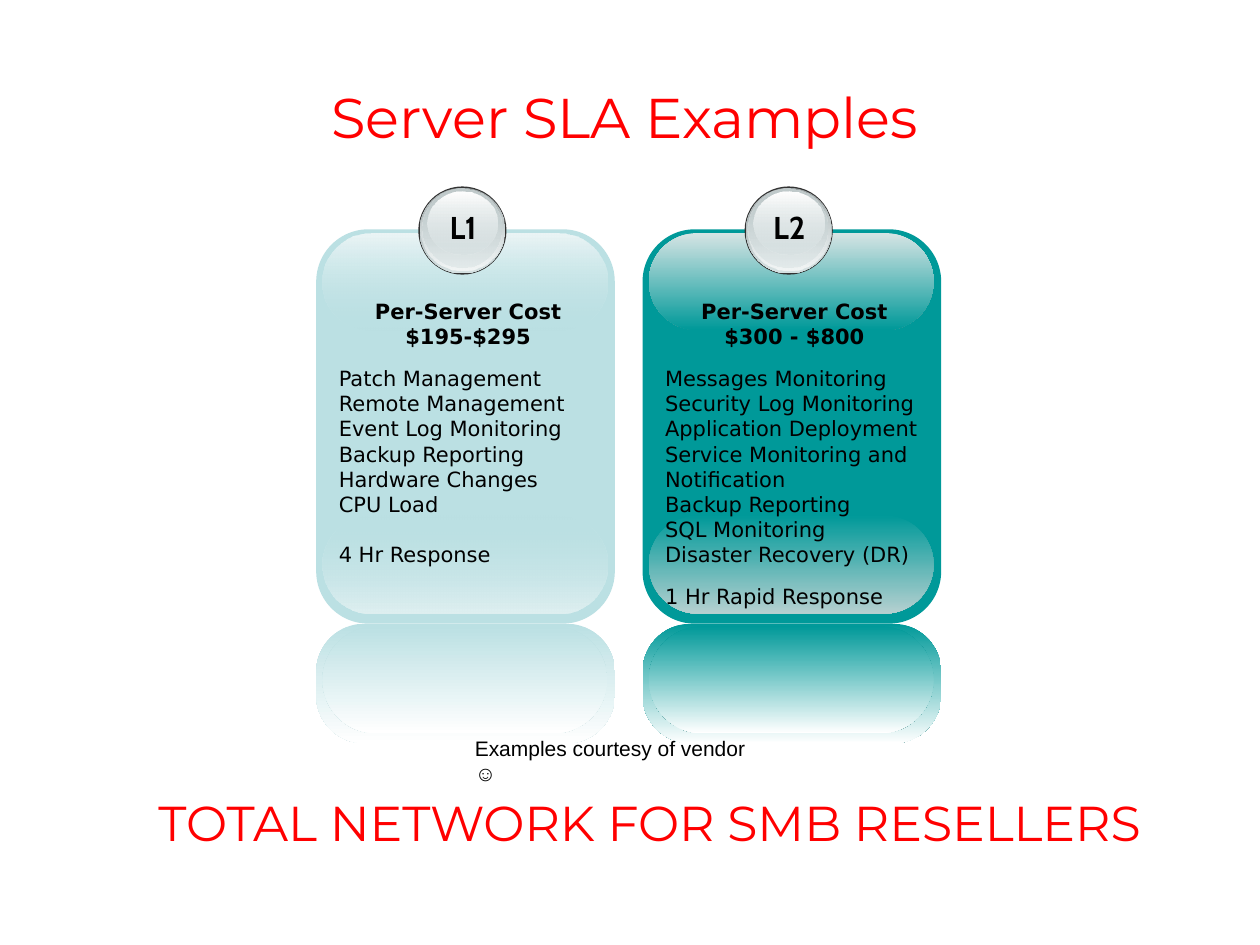
from dataclasses import dataclass
from typing import NamedTuple, Optional

from lxml import etree
from pptx import Presentation
from pptx.dml.color import RGBColor
from pptx.enum.shapes import MSO_SHAPE
from pptx.enum.text import MSO_ANCHOR, PP_ALIGN
from pptx.oxml.ns import qn
from pptx.util import Inches, Pt

ROUND, OVAL = MSO_SHAPE.ROUNDED_RECTANGLE, MSO_SHAPE.OVAL
LEFT, CENTER, MIDDLE = PP_ALIGN.LEFT, PP_ALIGN.CENTER, MSO_ANCHOR.MIDDLE

RED = RGBColor(0xFF, 0x00, 0x00)
BLACK = RGBColor(0x00, 0x00, 0x00)
WHITE = RGBColor(0xFF, 0xFF, 0xFF)
PALE = RGBColor(0xBB, 0xE0, 0xE3)
PALE_TOP = RGBColor(0xEB, 0xF5, 0xF6)
PALE_BOTTOM = RGBColor(0xDF, 0xF0, 0xF1)
TEAL = RGBColor(0x00, 0x99, 0x99)
TEAL_TOP = RGBColor(0xD6, 0xE4, 0xE4)
TEAL_BOTTOM = RGBColor(0xB5, 0xD0, 0xD0)
RIM = RGBColor(0x33, 0x33, 0x33)
STEEL = RGBColor(0x99, 0xA1, 0xA2)
GREY = RGBColor(0xC1, 0xCB, 0xCC)
SILVER = RGBColor(0xD6, 0xE1, 0xE2)
FROST = RGBColor(0xF2, 0xF5, 0xF5)

HEADING = dict(name="Montserrat", color=RED, bold=False)
BADGE = dict(name="Cabin", size=Pt(18), color=BLACK, bold=True)
BODY = dict(name="DejaVu Sans", size=Pt(12), color=BLACK, bold=False)
NOTE = dict(name="Arial", size=Pt(12), color=BLACK, bold=False)


class Stop(NamedTuple):
    color: RGBColor
    opacity: int = 100


class Layer(NamedTuple):
    """One filled shape; a single stop is a solid fill, two run downwards."""
    kind: int
    box: tuple
    stops: tuple
    adj: Optional[float] = None


class Line(NamedTuple):
    text: str
    align: int = LEFT
    bold: bool = False
    before: float = 0


@dataclass
class Panel:
    left: float
    label: str
    base: RGBColor
    top: RGBColor
    bottom: RGBColor
    cap_opacity: int
    price: str
    services: list
    response: str
    response_gap: float


PANELS = [
    Panel(2.51, "L1", PALE, PALE_TOP, PALE_BOTTOM, 0, "$195-$295",
          ["Patch Management", "Remote Management", "Event Log Monitoring",
           "Backup Reporting", "Hardware Changes", "CPU Load"],
          "4 Hr Response", 14),
    Panel(5.1, "L2", TEAL, TEAL_TOP, TEAL_BOTTOM, 100, "$300 - $800",
          ["Messages Monitoring", "Security Log Monitoring", "Application Deployment",
           "Service Monitoring and Notification", "Backup Reporting",
           "SQL Monitoring", "Disaster Recovery (DR)"],
          "1 Hr Rapid Response", 9.5),
]

# Glass badge, from rim to highlight; lefts are measured from the panel
BADGE_LAYERS = [
    Layer(OVAL, (0.81, 1.48, 0.7, 0.7), (Stop(RIM),)),
    Layer(OVAL, (0.82, 1.49, 0.68, 0.68), (Stop(STEEL), Stop(SILVER))),
    Layer(OVAL, (0.83, 1.49, 0.66, 0.66), (Stop(SILVER, 0), Stop(FROST))),
    Layer(OVAL, (0.84, 1.5, 0.63, 0.62), (Stop(GREY), Stop(SILVER, 48))),
    Layer(OVAL, (0.88, 1.52, 0.56, 0.5), (Stop(WHITE), Stop(SILVER, 38))),
]


def panel_layers(panel: Panel) -> list:
    base, cap = Stop(panel.base), Stop(panel.base, panel.cap_opacity)
    fade = (base, Stop(WHITE))
    return [
        Layer(ROUND, (0, 1.82, 2.37, 3.13), (base,), 0.175),
        Layer(ROUND, (0.03, 1.83, 2.3, 3.07), (base,), 0.167),
        Layer(ROUND, (0.05, 4.09, 2.26, 0.78), (cap, Stop(panel.bottom)), 0.5),
        Layer(ROUND, (0.05, 1.85, 2.26, 0.77), (Stop(panel.top), cap), 0.5),
        Layer(ROUND, (0, 4.95, 2.37, 0.95), fade, 0.404),
        Layer(ROUND, (0.05, 4.97, 2.26, 0.85), fade, 0.5),
    ]


def set_font(font, style: dict) -> None:
    for key, value in style.items():
        if key == "color":
            font.color.rgb = value
        else:
            setattr(font, key, value)


def draw_layer(shapes, layer: Layer, dx: float) -> None:
    x, y, w, h = layer.box
    sp = shapes.add_shape(layer.kind, Inches(x + dx), Inches(y), Inches(w), Inches(h))
    sp.shadow.inherit = False
    sp.line.fill.background()
    if layer.adj is not None:
        sp.adjustments[0] = layer.adj
    if len(layer.stops) == 1:
        sp.fill.solid()
        sp.fill.fore_color.rgb = layer.stops[0].color
        return
    sp.fill.gradient()
    sp.fill.gradient_angle = 270
    for gs, stop, place in zip(sp.fill.gradient_stops, layer.stops, (0, 1)):
        gs.color.rgb = stop.color
        gs.position = place
    for clr, stop in zip(sp._element.spPr.iter(qn("a:srgbClr")), layer.stops):
        if stop.opacity < 100:
            etree.SubElement(clr, qn("a:alpha"), val=str(stop.opacity * 1000))


def add_text(shapes, box: tuple, lines: list, style: dict, wrap: bool = True) -> None:
    tf = shapes.add_textbox(*map(Inches, box)).text_frame
    tf.word_wrap = wrap
    for i, line in enumerate(lines):
        p = tf.paragraphs[0] if i == 0 else tf.add_paragraph()
        p.alignment = line.align
        if line.before:
            p.space_before = Pt(line.before)
        r = p.add_run()
        r.text = line.text
        set_font(r.font, {**style, "bold": style["bold"] or line.bold})


def draw_panel(s, panel: Panel) -> None:
    shapes = s.shapes.add_group_shape().shapes
    for layer in panel_layers(panel) + BADGE_LAYERS:
        draw_layer(shapes, layer, panel.left)
    add_text(shapes, (panel.left + 0.87, 1.6, 0.59, 0.5),
             [Line(panel.label, CENTER)], BADGE, wrap=False)
    first, *rest = panel.services
    lines = [Line("Per-Server Cost", CENTER, True), Line(panel.price, CENTER, True),
             Line(first, before=9.5), *map(Line, rest),
             Line(panel.response, before=panel.response_gap)]
    add_text(shapes, (panel.left + 0.08, 2.32, 2.25, 2.6), lines, BODY)


def main() -> None:
    prs = Presentation()
    prs.slide_width, prs.slide_height = Inches(10), Inches(7.5)
    s = prs.slides.add_slide(prs.slide_layouts[5])

    # Title
    title = s.shapes.title
    title.left, title.top, title.width, title.height = map(Inches, (0.42, 0.3, 9.08, 1.25))
    tf = title.text_frame
    tf.text = "Server SLA Examples"
    tf.vertical_anchor = MIDDLE
    p = tf.paragraphs[0]
    p.alignment = CENTER
    set_font(p.runs[0].font, {**HEADING, "size": Pt(32)})

    # Service level panels
    for panel in PANELS:
        draw_panel(s, panel)

    # Credit and banner
    add_text(s.shapes, (3.67, 5.79, 2.4, 0.5), [Line("Examples courtesy of vendor ☺")], NOTE)
    add_text(s.shapes, (1.16, 6.24, 8.83, 0.57),
             [Line("TOTAL NETWORK FOR SMB RESELLERS")], {**HEADING, "size": Pt(28)})

    prs.save("out.pptx")


if __name__ == "__main__":
    main()
